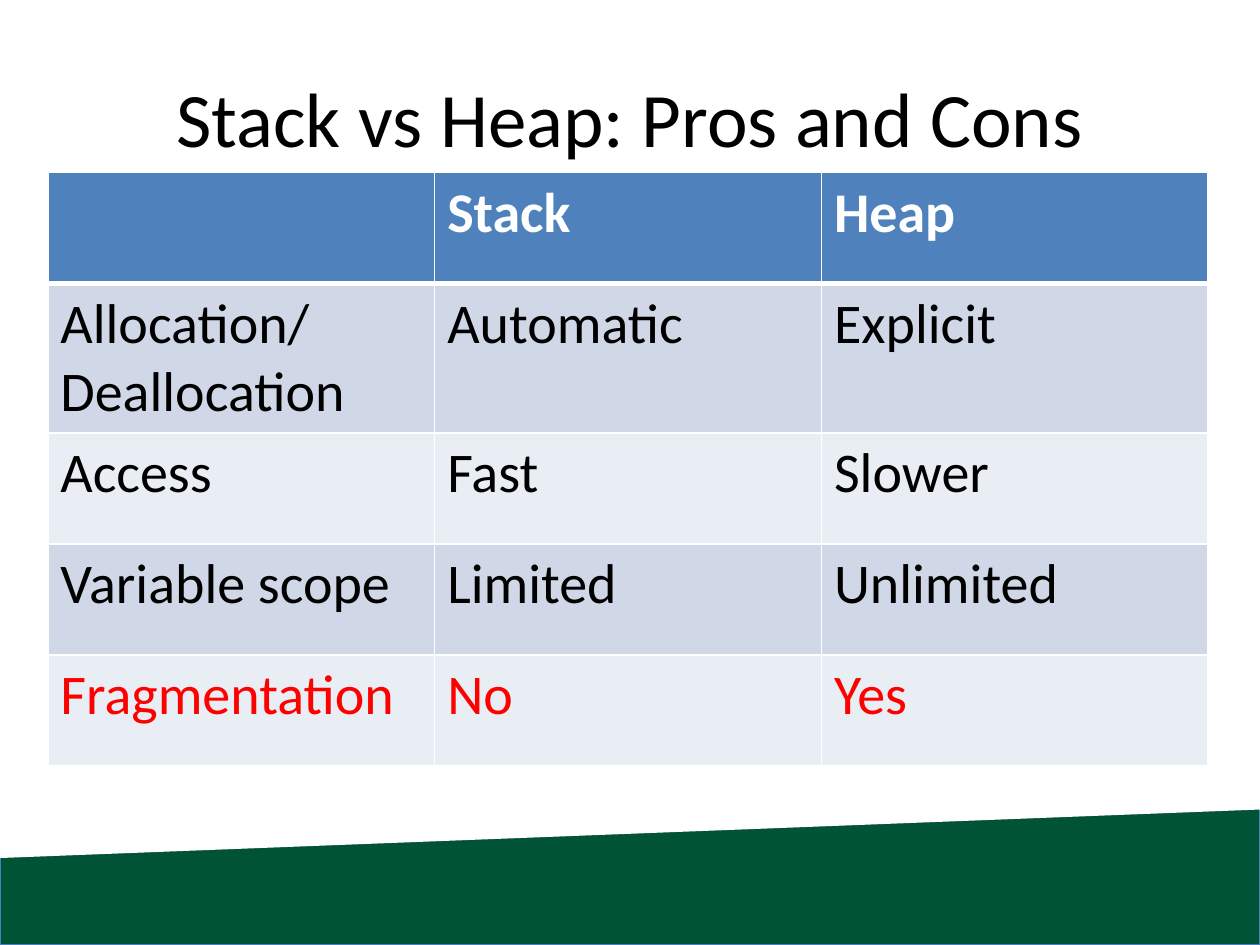
"""Build a slide with a table comparing stack and heap memory."""
import pptx
import pptx.dml.color
import pptx.enum.shapes
import pptx.enum.text
import pptx.oxml
import pptx.oxml.ns
import pptx.util

Inches, Pt = pptx.util.Inches, pptx.util.Pt
SHAPE = pptx.enum.shapes.MSO_SHAPE


def rgb(value):
    return pptx.dml.color.RGBColor.from_string(value)


def write(tf, text, size=32, color="000000", bold=False, align=pptx.enum.text.PP_ALIGN.LEFT):
    p = tf.paragraphs[0]
    p.alignment = align
    p.font.size = Pt(size)
    if text:
        r = p.add_run()
        r.text = text
        r.font.name = "Calibri"
        r.font.size = Pt(size)
        r.font.bold = bold
        r.font.color.rgb = rgb(color)


prs = pptx.Presentation()
prs.slide_width, prs.slide_height = W, H = Inches(10), Inches(7.5)
s = prs.slides.add_slide(prs.slide_layouts[5])

band_top = Inches(5.61)
band = s.shapes.add_shape(SHAPE.RECTANGLE, 0, band_top, W, H - band_top)
band.shadow.inherit = False
band.fill.solid()
band.fill.fore_color.rgb = rgb("005334")
band.line.color.rgb = rgb("4B7EBC")
band.line.width = Pt(0.75)

slant = s.shapes.add_shape(SHAPE.PARALLELOGRAM, Inches(3.84), Inches(0.65), Inches(2.32), W)
slant.adjustments[0] = 0.166
slant.rotation = 90
slant._element.spPr.xfrm.set("flipH", "1")
slant.shadow.inherit = False
slant.fill.solid()
slant.fill.fore_color.rgb = rgb("FFFFFF")
slant.line.fill.background()

title = s.shapes.title
s.shapes._spTree.append(title._element)
title.left, title.top, title.width, title.height = int(W * 0.05), int(H * 0.04), int(W * 0.9), Inches(1.25)
title.text_frame.vertical_anchor = pptx.enum.text.MSO_ANCHOR.MIDDLE
write(title.text_frame, "Stack vs Heap: Pros and Cons", size=44, align=pptx.enum.text.PP_ALIGN.CENTER)

rows = [
    ("", "Stack", "Heap"),
    ("Allocation/Deallocation", "Automatic", "Explicit"),
    ("Access", "Fast", "Slower"),
    ("Variable scope", "Limited", "Unlimited"),
    ("Fragmentation", "No", "Yes"),
]
fills = ["4F81BD", "D0D8E8", "E9EDF4", "D0D8E8", "E9EDF4"]
colors = ["FFFFFF", "000000", "000000", "000000", "FF0000"]
col_w, row_h = Inches(3.07), Inches(0.88)
table = s.shapes.add_table(len(rows), 3, Inches(0.38), Inches(1.37), col_w * 3, row_h * len(rows)).table
for column in table.columns:
    column.width = col_w
for i, (texts, fill, color) in enumerate(zip(rows, fills, colors)):
    table.rows[i].height = row_h
    for j, text in enumerate(texts):
        cell = table.cell(i, j)
        for side in "LRTB":
            heavy = (i == 0 and side == "B") or (i == 1 and side == "T")
            cell._tc.get_or_add_tcPr().append(pptx.oxml.parse_xml(
                f'<a:ln{side} {pptx.oxml.ns.nsdecls("a")} w="{Pt(3 if heavy else 1)}">'
                '<a:solidFill><a:srgbClr val="FFFFFF"/></a:solidFill>'
                f'</a:ln{side}>'))
        cell.fill.solid()
        cell.fill.fore_color.rgb = rgb(fill)
        write(cell.text_frame, text, color=color, bold=i == 0)

prs.save("out.pptx")
